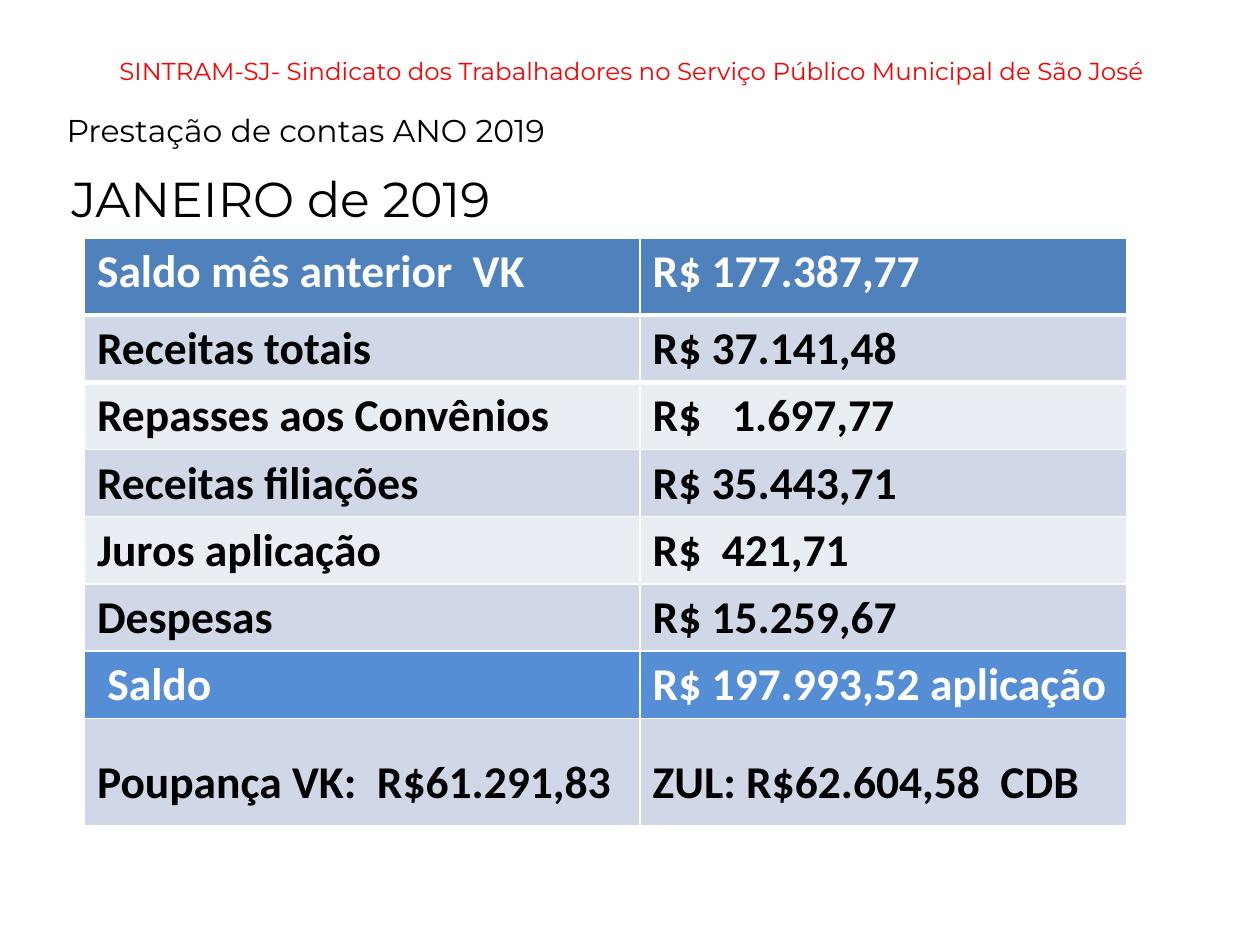
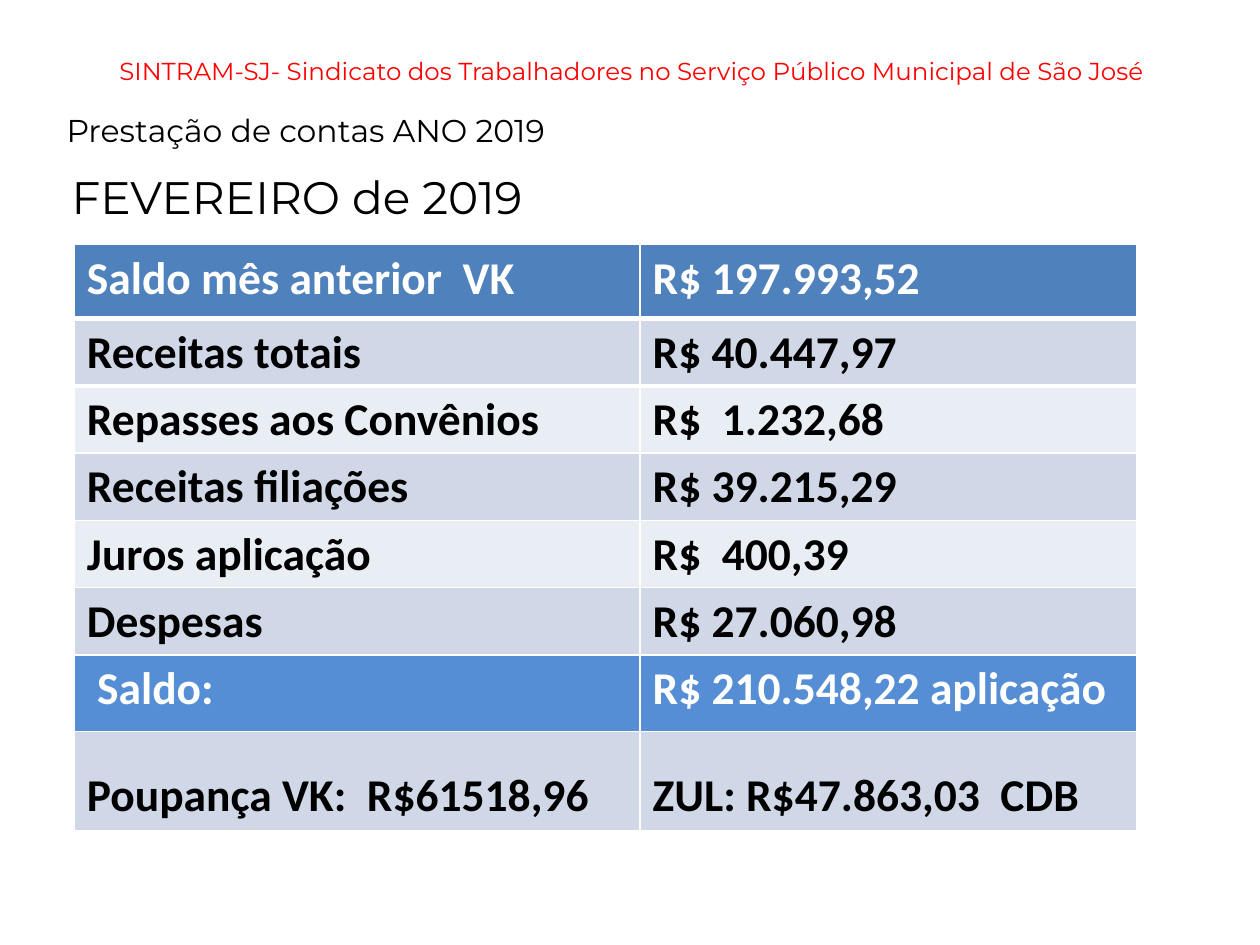
import pptx
from lxml import etree
from pptx.dml.color import RGBColor
from pptx.enum.text import MSO_ANCHOR, MSO_AUTO_SIZE, PP_ALIGN
from pptx.oxml.ns import qn
from pptx.util import Inches, Pt

RED = RGBColor(0xFF, 0x00, 0x00)
BLACK = RGBColor(0x00, 0x00, 0x00)
WHITE = RGBColor(0xFF, 0xFF, 0xFF)
HEADER_BLUE = RGBColor(0x4F, 0x81, 0xBD)
BALANCE_BLUE = RGBColor(0x55, 0x8E, 0xD5)
BAND_DARK = RGBColor(0xD0, 0xD8, 0xE8)
BAND_LIGHT = RGBColor(0xE9, 0xED, 0xF4)

HEADING_FONT = "Montserrat"
TABLE_FONT = "Calibri"
TABLE_SIZE = 26
TITLE_ONLY = 5
HEADER_ROW, BALANCE_ROW, SAVINGS_ROW = 0, 6, 7

UNION = "SINTRAM-SJ- Sindicato dos Trabalhadores no Serviço Público Municipal de São José"
REPORT = "Prestação de contas ANO 2019"

MONTHS = [
    {
        "name": "JANEIRO de 2019", "size": 28, "height": 0.57,
        "table_at": (0.67, 1.89), "cols": (4.41, 3.86),
        "heights": [0.61] + [0.53] * 6 + [0.85],
        "rows": [
            ("Saldo mês anterior  VK", "R$ 177.387,77"),
            ("Receitas totais", "R$ 37.141,48"),
            ("Repasses aos Convênios", "R$   1.697,77"),
            ("Receitas filiações", "R$ 35.443,71"),
            ("Juros aplicação", "R$  421,71"),
            ("Despesas", "R$ 15.259,67"),
            (" Saldo", "R$ 197.993,52 aplicação"),
            ("Poupança VK:  R$61.291,83", "ZUL: R$62.604,58  CDB"),
        ],
    },
    {
        "name": "FEVEREIRO de 2019", "size": 26, "height": 0.54,
        "table_at": (0.59, 1.94), "cols": (4.49, 3.94),
        "heights": [0.59] + [0.53] * 5 + [0.61, 0.79],
        "rows": [
            ("Saldo mês anterior  VK", "R$ 197.993,52"),
            ("Receitas totais", "R$ 40.447,97"),
            ("Repasses aos Convênios", "R$  1.232,68"),
            ("Receitas filiações", "R$ 39.215,29"),
            ("Juros aplicação", "R$  400,39"),
            ("Despesas", "R$ 27.060,98"),
            (" Saldo:", "R$ 210.548,22 aplicação"),
            ("Poupança VK:  R$61518,96", "ZUL: R$47.863,03  CDB"),
        ],
    },
]


def write(tf, text, font, size, color, bold=False):
    tf.text = text
    f = tf.paragraphs[0].runs[0].font
    f.name, f.size, f.bold = font, Pt(size), bold
    f.color.rgb = color


def add_title(s, left, top, width, height):
    sp = s.shapes.title
    sp.left, sp.top, sp.width, sp.height = map(Inches, (left, top, width, height))
    tf = sp.text_frame
    tf.auto_size = MSO_AUTO_SIZE.NONE
    tf.vertical_anchor = MSO_ANCHOR.MIDDLE
    write(tf, UNION, HEADING_FONT, 14, RED)
    tf.paragraphs[0].alignment = PP_ALIGN.CENTER


def add_heading(s, text, size, left, top, width, height):
    sp = s.shapes.add_textbox(*map(Inches, (left, top, width, height)))
    tf = sp.text_frame
    tf.word_wrap = True
    tf.auto_size = MSO_AUTO_SIZE.SHAPE_TO_FIT_TEXT
    write(tf, text, HEADING_FONT, size, BLACK)


def row_colors(i):
    """Return the fill and text colour of table row i."""
    if i == HEADER_ROW:
        return HEADER_BLUE, WHITE
    if i == BALANCE_ROW:
        return BALANCE_BLUE, WHITE
    return (BAND_DARK if i % 2 or i == SAVINGS_ROW else BAND_LIGHT), BLACK


def set_border(cell, side, width):
    """Draw a white border; side is one of lnL, lnR, lnT, lnB."""
    ln = etree.Element(qn("a:" + side), w=str(Pt(width)))
    fill = etree.SubElement(ln, qn("a:solidFill"))
    etree.SubElement(fill, qn("a:srgbClr"), val=str(WHITE))
    cell._tc.get_or_add_tcPr().insert(0, ln)


def add_accounts_table(s, rows, cols, heights, left, top):
    """Add the table; the default table style supplies the thin white borders."""
    frame = s.shapes.add_table(len(rows), len(cols), Inches(left), Inches(top),
                               Inches(sum(cols)), Inches(sum(heights)))
    table = frame.table
    for column, width in zip(table.columns, cols):
        column.width = Inches(width)
    for i, (values, height) in enumerate(zip(rows, heights)):
        table.rows[i].height = Inches(height)
        fill, color = row_colors(i)
        for j, value in enumerate(values):
            cell = table.cell(i, j)
            cell.fill.solid()
            cell.fill.fore_color.rgb = fill
            write(cell.text_frame, value, TABLE_FONT, TABLE_SIZE, color, bold=True)
            if i == HEADER_ROW:
                set_border(cell, "lnB", 3)
            elif i == HEADER_ROW + 1:
                set_border(cell, "lnT", 3)
            elif i == SAVINGS_ROW:
                cell.margin_top = Inches(0.29)


def add_month_slide(prs, month):
    s = prs.slides.add_slide(prs.slide_layouts[TITLE_ONLY])
    add_title(s, 0.17, 0.13, 9.69, 0.87)
    add_heading(s, REPORT, 18, 0.43, 0.83, 9.21, 0.4)
    add_accounts_table(s, month["rows"], month["cols"], month["heights"], *month["table_at"])
    add_heading(s, month["name"], month["size"], 0.47, 1.29, 6.54, month["height"])


def main():
    prs = pptx.Presentation()
    prs.slide_width, prs.slide_height = Inches(10), Inches(7.5)
    for month in MONTHS:
        add_month_slide(prs, month)
    prs.save("out.pptx")


if __name__ == "__main__":
    main()
